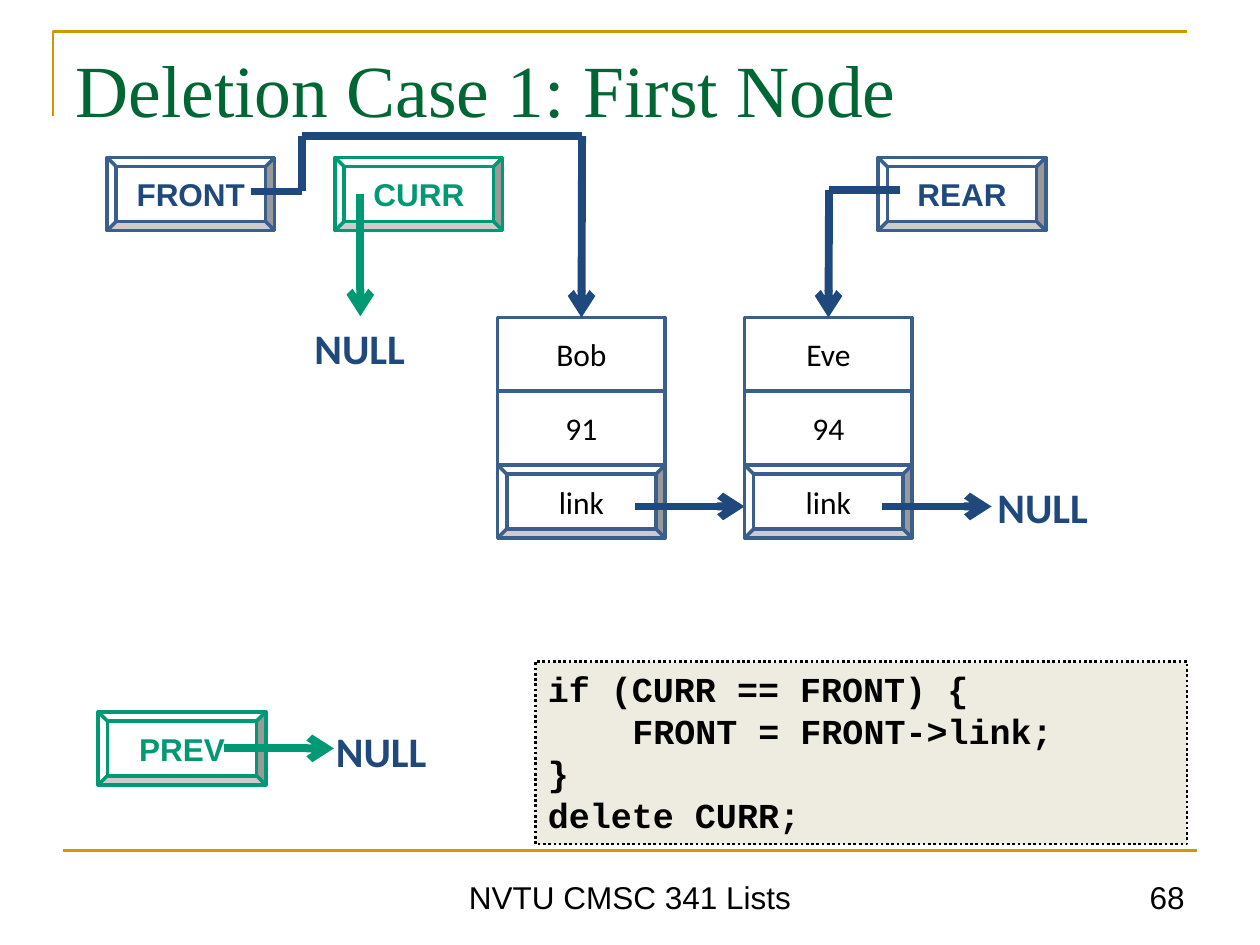
import pptx
import pptx.util
import pptx.dml.color
import pptx.enum.dml
import pptx.enum.shapes
import pptx.enum.text
import pptx.oxml
import pptx.oxml.ns
from pptx.util import Inches

RGBColor = pptx.dml.color.RGBColor
Shape = pptx.enum.shapes.MSO_SHAPE
Align = pptx.enum.text.PP_ALIGN
Anchor = pptx.enum.text.MSO_ANCHOR

WHITE = RGBColor(0xFF, 0xFF, 0xFF)
BLACK = RGBColor(0x00, 0x00, 0x00)
GOLD = RGBColor(0xCC, 0x99, 0x00)
FOREST = RGBColor(0x00, 0x66, 0x33)
NAVY = RGBColor(0x1F, 0x49, 0x7D)
STEEL = RGBColor(0x3A, 0x5F, 0x8C)
GREEN = RGBColor(0x00, 0x99, 0x73)
CREAM = RGBColor(0xEE, 0xEC, 0xE1)

CELL_WIDTH, CELL_HEIGHT = 1.33, 0.58
ROW_STEP = 0.585


def write(shape, lines, size, face, color, bold=False, align=Align.CENTER, anchor=Anchor.TOP):
    """Fill a shape with uniformly formatted paragraphs."""
    frame = shape.text_frame
    frame.word_wrap = True
    frame.auto_size = pptx.enum.text.MSO_AUTO_SIZE.NONE
    frame.vertical_anchor = anchor
    frame.text = "\n".join(lines)
    for para in frame.paragraphs:
        para.alignment = align
        para.font.size = pptx.util.Pt(size)
        para.font.name = face
        para.font.color.rgb = color
        para.font.bold = bold


def add_text(page, left, top, width, height, text, size, face, color, **style):
    """Add a text box holding one paragraph."""
    box = page.shapes.add_textbox(Inches(left), Inches(top), Inches(width), Inches(height))
    write(box, [text], size, face, color, **style)


def add_box(page, kind, left, top, width, height, fill, line, weight):
    """Add a flat filled shape with an outline."""
    box = page.shapes.add_shape(kind, Inches(left), Inches(top), Inches(width), Inches(height))
    box.shadow.inherit = False
    box.fill.solid()
    box.fill.fore_color.rgb = fill
    box.line.color.rgb = line
    box.line.width = pptx.util.Pt(weight)
    return box


def add_route(page, points, color, weight=4.5, arrow=True, target=None):
    """Draw straight lines through the points, optionally ending in an arrow on top of a target."""
    namespace = pptx.oxml.ns.nsdecls("a")
    for start, end in zip(points, points[1:]):
        line = page.shapes.add_connector(
            pptx.enum.shapes.MSO_CONNECTOR.STRAIGHT, *map(Inches, start + end))
        line.line.color.rgb = color
        line.line.width = pptx.util.Pt(weight)
        line._element.spPr.append(pptx.oxml.parse_xml(f"<a:effectLst {namespace}/>"))
    if arrow:
        line._element.spPr.get_or_add_ln().append(
            pptx.oxml.parse_xml(f'<a:tailEnd {namespace} type="arrow"/>'))
    if target is not None:
        line.end_connect(target, 0)


def add_frame(page):
    """Draw the gold rules, the footer and the page number."""
    outline = page.shapes.build_freeform(Inches(0.42), Inches(0.92))
    outline.add_line_segments(
        [(Inches(0.42), Inches(0.25)), (Inches(9.42), Inches(0.25))], close=False)
    corner = outline.convert_to_shape()
    corner.shadow.inherit = False
    corner.fill.background()
    corner.line.color.rgb = GOLD
    corner.line.width = pptx.util.Pt(1.5)
    add_route(page, [(0.5, 6.75), (9.5, 6.75)], GOLD, 1.5, arrow=False)
    add_text(page, 1.75, 6.83, 6.5, 0.49, "NVTU CMSC 341 Lists", 18, "Arial", BLACK,
             anchor=Anchor.BOTTOM)
    add_text(page, 7.17, 6.83, 2.33, 0.49, "68", 18, "Arial", BLACK,
             align=Align.RIGHT, anchor=Anchor.BOTTOM)


def add_title(page, left, top, width, height):
    """Place and format the title placeholder."""
    title = page.shapes.title
    title.left, title.top = Inches(left), Inches(top)
    title.width, title.height = Inches(width), Inches(height)
    write(title, ["Deletion Case 1: First Node"], 42, "Times New Roman", FOREST, align=Align.LEFT)


def add_pointer(page, left, top, name, line, color):
    """Add a bevelled pointer variable."""
    box = add_box(page, Shape.BEVEL, left, top, CELL_WIDTH, CELL_HEIGHT, WHITE, line, 2)
    write(box, [name], 18, "Arial", color, bold=True, anchor=Anchor.MIDDLE)


def add_null(page, left, top):
    """Add a NULL label."""
    add_text(page, left, top, 1.55, 0.51, "NULL", 24, "Calibri", NAVY, bold=True)


def add_node(page, left, top, name, score):
    """Stack a list node with its link arrow and return its top cell."""
    cells = []
    for row, (text, kind) in enumerate(
            [(name, Shape.RECTANGLE), (score, Shape.RECTANGLE), ("link", Shape.BEVEL)]):
        cell = add_box(page, kind, left, top + row * ROW_STEP, CELL_WIDTH, CELL_HEIGHT,
                       WHITE, STEEL, 2)
        write(cell, [text], 18, "Calibri", BLACK, anchor=Anchor.MIDDLE)
        cells.append(cell)
    add_route(page, [(left + 1.09, top + 1.5), (left + 1.96, top + 1.5)], NAVY)
    return cells[0]


def add_code(page, left, top, width, height):
    """Add the dotted code panel."""
    panel = add_box(page, Shape.RECTANGLE, left, top, width, height, CREAM, BLACK, 1.5)
    panel.line.dash_style = pptx.enum.dml.MSO_LINE.ROUND_DOT
    lines = ["if (CURR == FRONT) {", "FRONT = FRONT->link;", "}", "delete CURR;"]
    write(panel, lines, 20, "Courier New", BLACK, bold=True, align=Align.LEFT)
    body = panel.text_frame.paragraphs[1]._p.get_or_add_pPr()
    body.set("marL", str(Inches(0.67)))


def add_diagram(page):
    """Draw the list nodes, the pointer variables and their arrows."""
    add_pointer(page, 0.85, 1.25, "FRONT", STEEL, NAVY)
    add_pointer(page, 2.66, 1.25, "CURR", GREEN, GREEN)
    add_pointer(page, 6.97, 1.25, "REAR", STEEL, NAVY)
    add_pointer(page, 0.78, 5.65, "PREV", GREEN, GREEN)
    first = add_node(page, 3.95, 2.52, "Bob", "91")
    last = add_node(page, 5.91, 2.52, "Eve", "94")
    for left, top in [(2.25, 5.71), (7.5, 3.77), (2.08, 2.51)]:
        add_null(page, left, top)
    add_route(page, [(1.99, 1.52), (2.4, 1.52), (2.4, 1.08), (4.62, 1.08), (4.62, 2.52)],
              NAVY, target=first)
    add_route(page, [(7.14, 1.51), (6.58, 1.51), (6.58, 2.52)], NAVY, target=last)
    add_route(page, [(2.86, 1.54), (2.86, 2.51)], GREEN)
    add_route(page, [(1.78, 5.94), (2.65, 5.94)], GREEN)


def main():
    """Build and save the slide."""
    deck = pptx.Presentation()
    deck.slide_width, deck.slide_height = Inches(10), Inches(7.5)
    page = deck.slides.add_slide(deck.slide_layouts[5])
    add_frame(page)
    add_title(page, 0.5, 0.3, 8.99, 1.11)
    add_diagram(page)
    add_code(page, 4.25, 5.25, 5.17, 1.45)
    deck.save("out.pptx")


if __name__ == "__main__":
    main()
